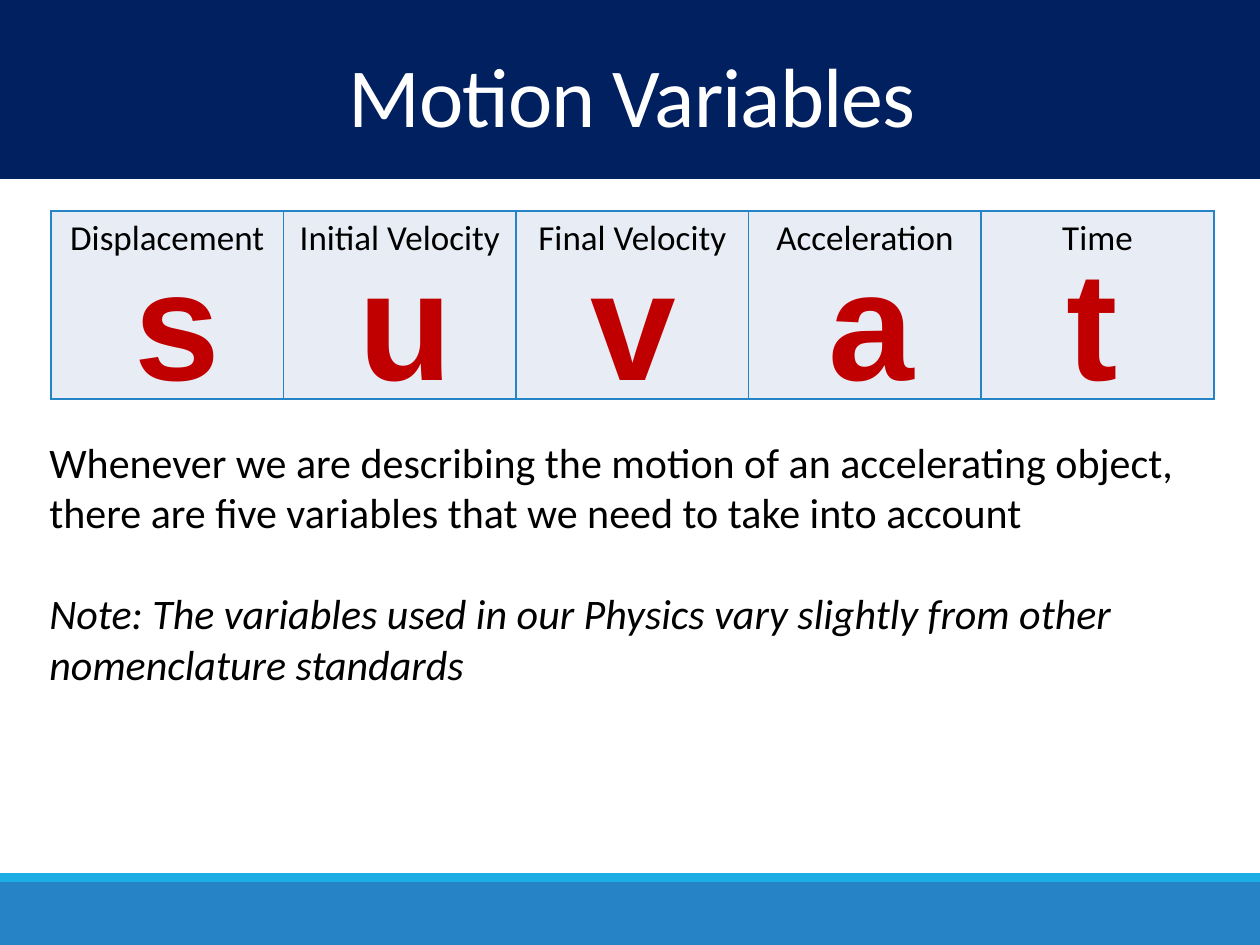
from pptx import Presentation
from pptx.dml.color import RGBColor
from pptx.enum.shapes import MSO_SHAPE
from pptx.enum.text import MSO_ANCHOR, MSO_AUTO_SIZE, PP_ALIGN
from pptx.oxml.ns import qn
from pptx.util import Pt
from lxml.etree import SubElement

SCALE = 914400 / 126
HUES = {
    "navy": "002060", "blue": "2683C6", "sky": "1CADE4", "pale": "E8EDF5",
    "red": "C00000", "black": "000000", "white": "FFFFFF",
}
TERMS = [
    ("Displacement", "s", 71, 94),
    ("Initial Velocity", "u", 62, 120),
    ("Final Velocity", "v", 62, 110),
    ("Acceleration", "a", 67, 110),
    ("Time", "t", 73, 86),
]
NOTES = [
    ("Whenever we are describing the motion of an accelerating object, "
     "there are five variables that we need to take into account", False),
    ("Note: The variables used in our Physics vary slightly from other "
     "nomenclature standards", True),
]


def px(*sizes):
    return [round(size * SCALE) for size in sizes]


def paint(shape, hue):
    shape.fill.solid()
    shape.fill.fore_color.rgb = RGBColor.from_string(HUES[hue])


def style(para, size, hue, face="Calibri", bold=False, slant=False):
    for run in para.runs:
        font = run.font
        font.name, font.size, font.bold, font.italic = face, Pt(size), bold, slant
        font.color.rgb = RGBColor.from_string(HUES[hue])


def add_bar(slide, box, hue):
    bar = slide.shapes.add_shape(MSO_SHAPE.RECTANGLE, *px(*box))
    bar.shadow.inherit = False
    paint(bar, hue)
    bar.line.fill.background()
    return bar


def add_header(slide, box):
    left, top, width, height = box
    bar = add_bar(slide, box, "navy")
    slide.shapes._spTree.insert(2, bar._element)
    title = slide.shapes.title
    title.left, title.top, title.width, title.height = px(
        left + 4, top + 53, width - 4, 106)
    frame = title.text_frame
    frame.text = "Motion Variables"
    frame.auto_size = MSO_AUTO_SIZE.NONE
    frame.vertical_anchor = MSO_ANCHOR.TOP
    para = frame.paragraphs[0]
    para.alignment, para.line_spacing = PP_ALIGN.CENTER, 0.85
    style(para, 48, "white")
    para.runs[0].font._element.set("spc", "-50")


def add_footer(slide, box):
    left, top, width, height = box
    add_bar(slide, (left, top + 9, width, height - 9), "blue")
    add_bar(slide, (left, top, width, 9), "sky")


def edge_cell(cell):
    props = cell._tc.get_or_add_tcPr()
    for spot, side in enumerate(("lnL", "lnR", "lnT", "lnB")):
        line = SubElement(props, qn(f"a:{side}"), w=str(Pt(1)))
        fill = SubElement(line, qn("a:solidFill"))
        SubElement(fill, qn("a:srgbClr"), val=HUES["blue"])
        props.insert(spot, line)


def add_letter(slide, box, letter):
    frame = slide.shapes.add_textbox(*px(*box)).text_frame
    frame.word_wrap = False
    frame.auto_size = MSO_AUTO_SIZE.SHAPE_TO_FIT_TEXT
    frame.text = letter
    style(frame.paragraphs[0], 88, "red", "Arial", bold=True)


def add_terms(slide, box):
    left, top, width, height = box
    step = width / len(TERMS)
    table = slide.shapes.add_table(1, len(TERMS), *px(*box)).table
    for col, (name, letter, inset, span) in enumerate(TERMS):
        table.columns[col].width = px(step)[0]
        cell = table.cell(0, col)
        cell.text = name
        para = cell.text_frame.paragraphs[0]
        para.alignment = PP_ALIGN.CENTER
        style(para, 20, "black")
        paint(cell, "pale")
        edge_cell(cell)
        add_letter(slide, (left + col * step + inset, top + 9, span, 199), letter)


def add_notes(slide, box):
    frame = slide.shapes.add_textbox(*px(*box)).text_frame
    frame.word_wrap = True
    for spot, (words, slant) in enumerate(NOTES):
        para = frame.add_paragraph() if spot else frame.paragraphs[0]
        para.text = words
        para.space_before = Pt(29 * spot)
        style(para, 24, "black", slant=slant)


def main():
    deck = Presentation()
    deck.slide_width, deck.slide_height = px(1260, 945)
    slide = deck.slides.add_slide(deck.slide_layouts[5])
    add_footer(slide, (0, 873, 1260, 72))
    add_header(slide, (0, 0, 1260, 179))
    add_terms(slide, (51, 211, 1163, 188))
    add_notes(slide, (37, 430, 1186, 267))
    deck.save("out.pptx")


if __name__ == "__main__":
    main()
